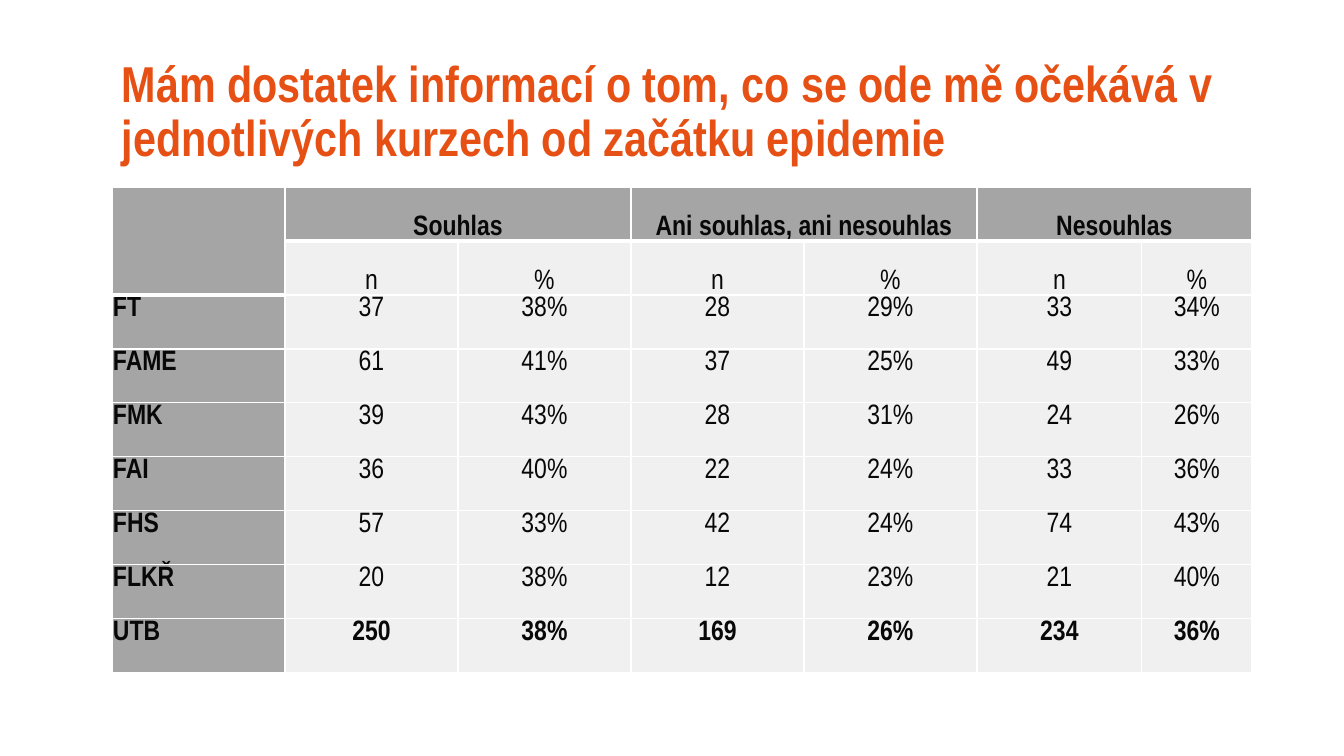
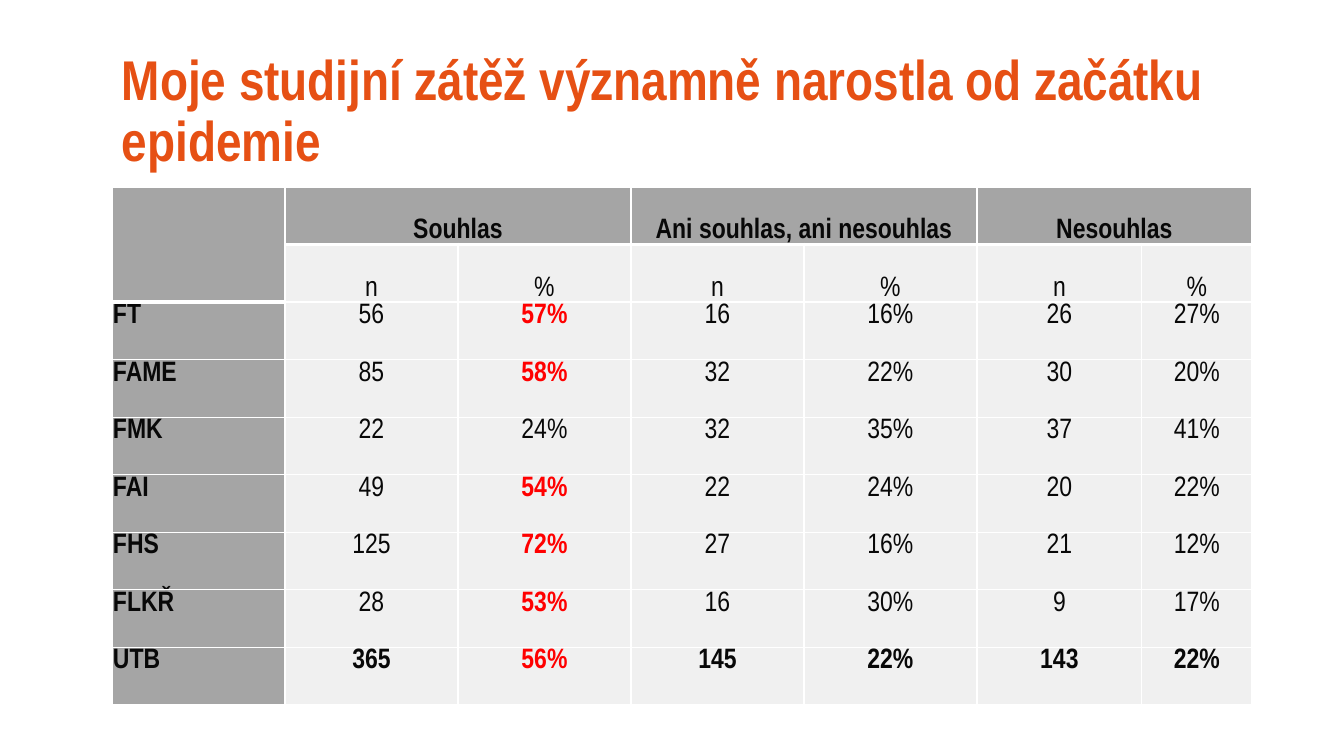
from lxml import etree
from pptx import Presentation
from pptx.dml.color import RGBColor
from pptx.enum.text import MSO_ANCHOR, PP_ALIGN
from pptx.oxml.ns import qn
from pptx.util import Emu, Pt

PX = 914400 / 100.8
CENTER, LEFT = PP_ALIGN.CENTER, PP_ALIGN.LEFT
TOP, MIDDLE, BOTTOM = MSO_ANCHOR.TOP, MSO_ANCHOR.MIDDLE, MSO_ANCHOR.BOTTOM

FONT = "Arial Narrow"
COLORS = {
    "title": "E65014",
    "text": "080808",
    "majority": "FF0000",
    "header": "A5A5A5",
    "body": "F0F0F0",
    "border": "FFFFFF",
}
MARGIN_X, TITLE_Y, TITLE_H, TABLE_Y = 112, 40, 146, 187
COLUMN_WIDTHS = [173] * 5 + [165, 110]
THIN, THICK = 1, 3

ANSWERS = ["Souhlas", "Ani souhlas, ani nesouhlas", "Nesouhlas"]
HEADER_ROWS = [
    [""] + [text for answer in ANSWERS for text in (answer, "")],
    [""] + ["n", "%"] * len(ANSWERS),
]
TOTAL = "UTB"

QUESTIONS = [
    {
        "title": "Mám dostatek informací o tom, co se ode mě očekává v "
                 "jednotlivých kurzech od začátku epidemie",
        "title_size": 36,
        "table_height": 486,
        "faculties": [
            ["FT", "37", "38%", "28", "29%", "33", "34%"],
            ["FAME", "61", "41%", "37", "25%", "49", "33%"],
            ["FMK", "39", "43%", "28", "31%", "24", "26%"],
            ["FAI", "36", "40%", "22", "24%", "33", "36%"],
            ["FHS", "57", "33%", "42", "24%", "74", "43%"],
            ["FLKŘ", "20", "38%", "12", "23%", "21", "40%"],
            [TOTAL, "250", "38%", "169", "26%", "234", "36%"],
        ],
    },
    {
        "title": "Moje studijní zátěž významně narostla od začátku epidemie",
        "title_size": 40,
        "table_height": 518,
        "faculties": [
            ["FT", "56", "57%", "16", "16%", "26", "27%"],
            ["FAME", "85", "58%", "32", "22%", "30", "20%"],
            ["FMK", "22", "24%", "32", "35%", "37", "41%"],
            ["FAI", "49", "54%", "22", "24%", "20", "22%"],
            ["FHS", "125", "72%", "27", "16%", "21", "12%"],
            ["FLKŘ", "28", "53%", "16", "30%", "9", "17%"],
            [TOTAL, "365", "56%", "145", "22%", "143", "22%"],
        ],
    },
]


def add_run(paragraph, text, size, color, bold):
    run = paragraph.add_run()
    run.text = text
    run.font.name = FONT
    run.font.size = Pt(size)
    run.font.bold = bold
    run.font.color.rgb = RGBColor.from_string(COLORS[color])


def set_borders(cell, top, bottom):
    """Draw all four cell borders; top and bottom are widths in points."""
    properties = cell._tc.get_or_add_tcPr()
    for side, width in (("L", THIN), ("R", THIN), ("T", top), ("B", bottom)):
        line = etree.SubElement(properties, qn(f"a:ln{side}"), w=str(Pt(width)))
        fill = etree.SubElement(line, qn("a:solidFill"))
        etree.SubElement(fill, qn("a:srgbClr"), val=COLORS["border"])


prs = Presentation()
prs.slide_width, prs.slide_height = Emu(round(1344 * PX)), Emu(round(756 * PX))
blank = prs.slide_layouts[6]
left = Emu(round(MARGIN_X * PX))
width = Emu(round(sum(COLUMN_WIDTHS) * PX))

for question in QUESTIONS:
    slide = prs.slides.add_slide(blank)

    title = slide.shapes.add_textbox(
        left, Emu(round(TITLE_Y * PX)), width, Emu(round(TITLE_H * PX))).text_frame
    title.word_wrap = True
    title.vertical_anchor = MIDDLE
    title.paragraphs[0].line_spacing = 0.9
    add_run(title.paragraphs[0], question["title"], question["title_size"], "title", True)

    rows = HEADER_ROWS + question["faculties"]
    height = Emu(round(question["table_height"] * PX))
    results = slide.shapes.add_table(
        len(rows), len(COLUMN_WIDTHS), left, Emu(round(TABLE_Y * PX)), width, height).table
    results.first_row = results.horz_banding = False
    for column, column_width in zip(results.columns, COLUMN_WIDTHS):
        column.width = Emu(round(column_width * PX))
    for row in results.rows:
        row.height = Emu(round(height / len(rows)))

    results.cell(0, 0).merge(results.cell(1, 0))
    for c in range(1, len(COLUMN_WIDTHS), 2):
        results.cell(0, c).merge(results.cell(0, c + 1))

    for r, values in enumerate(rows):
        for c, value in enumerate(values):
            cell = results.cell(r, c)
            is_header = r == 0 or c == 0
            below_header = r == (2 if c == 0 else 1)
            above_body = r == 0 or (r == 1 and c == 0)
            set_borders(cell, THICK if below_header and not above_body else THIN,
                        THICK if above_body else THIN)
            cell.fill.solid()
            cell.fill.fore_color.rgb = RGBColor.from_string(
                COLORS["header" if is_header else "body"])
            cell.margin_left = cell.margin_right = cell.margin_top = Emu(round(PX))
            cell.margin_bottom = 0
            cell.vertical_anchor = BOTTOM if r < len(HEADER_ROWS) else TOP
            if value:
                is_majority = value[:-1].isdigit() and value.endswith("%") and int(value[:-1]) > 50
                paragraph = cell.text_frame.paragraphs[0]
                paragraph.alignment = LEFT if c == 0 else CENTER
                add_run(paragraph, value, 20, "majority" if is_majority else "text",
                        is_header or is_majority or values[0] == TOTAL)

prs.save("out.pptx")
